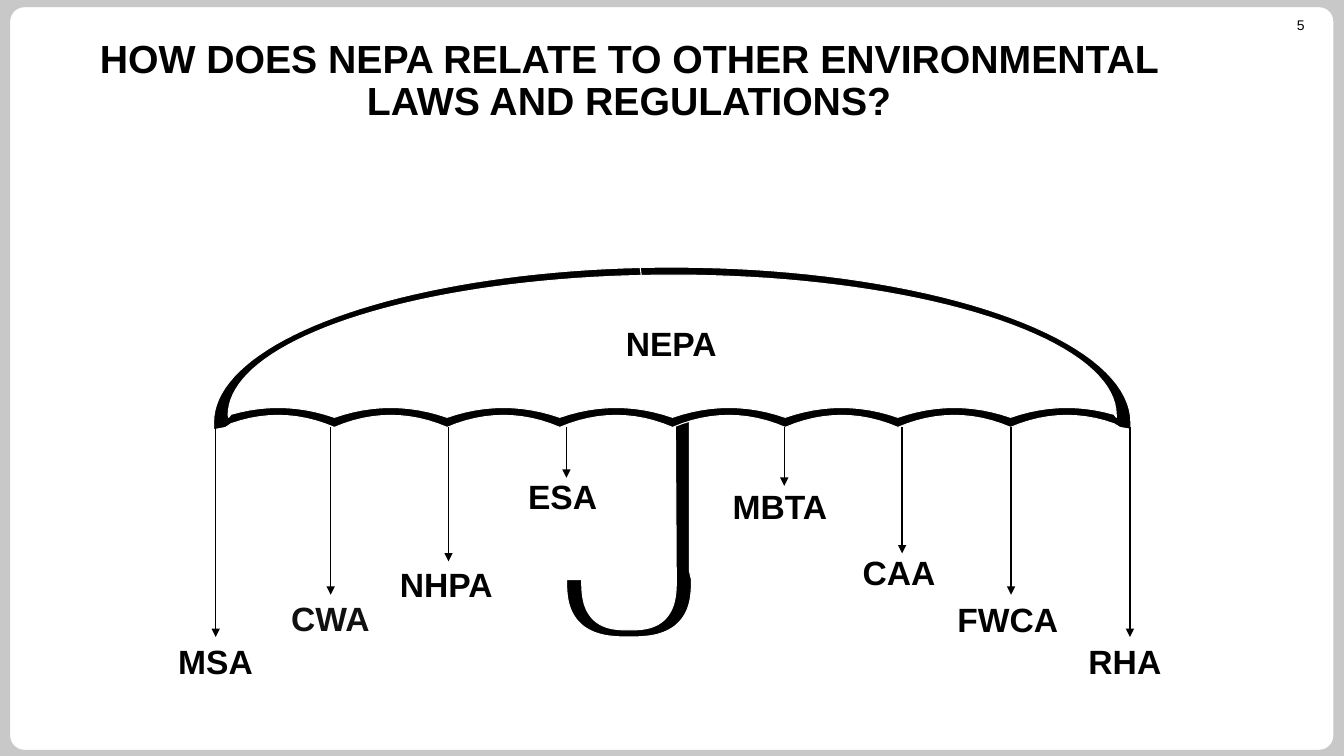
from math import copysign, cos, radians, sin

from lxml.etree import SubElement
from pptx import Presentation
from pptx.dml.color import RGBColor
from pptx.enum.shapes import MSO_CONNECTOR, MSO_SHAPE
from pptx.enum.text import MSO_ANCHOR, MSO_AUTO_SIZE, PP_ALIGN
from pptx.oxml.ns import qn
from pptx.util import Pt

SEAM = 94
CENTER = 480.2
FIRST_VALLEY, SCALLOP, SCALLOPS = 158.4, 80.5, 8
HEM = 305.3

LAWS = [
    ("MSA", 120.2, 454.3, 69.8, 154.1, 455),
    ("CWA", 200.9, 423.4, 70.6, 236.2, 424.8),
    ("NHPA", 278.6, 399.6, 82.8, 320.4, 401),
    ("ESA", 370.1, 336.2, 64.1, 404.6, 341.3),
    ("MBTA", 516.2, 343.4, 87.8, 560.2, 347),
    ("CAA", 609.1, 391, 70.6, 644.4, 395.3),
    ("FWCA", 676.8, 424.1, 90.7, 722.2, 424.8),
    ("RHA", 770.4, 454.3, 75.6, 807.1, 455),
]


def color(value):
    return RGBColor.from_string(value)


def format_text(frame, text, size=24, bold=True, ink="000000", align=PP_ALIGN.LEFT,
                spacing=1.0, font="Arial"):
    para = frame.paragraphs[0]
    para.alignment = align
    para.line_spacing = spacing
    para.space_before = Pt(0)
    span = para.add_run()
    span.text = text
    span.font.name = font
    span.font.size = Pt(size)
    span.font.bold = bold
    span.font.color.rgb = color(ink)


def arc(center, base, radius, height, start, end, power=2, steps=40):
    points = []
    for step in range(steps + 1):
        angle = radians(start + (end - start) * step / steps)
        across, up = (copysign(abs(part) ** (2 / power), part)
                      for part in (cos(angle), sin(angle)))
        points.append((center + radius * across, base - height * up))
    return points


def scallops(left, right, valley, rise, steps=12):
    points = []
    for step in range(SCALLOPS * steps + 1):
        x = FIRST_VALLEY + SCALLOP * step / steps
        part = step % steps / steps
        points.append((min(max(x, left), right), valley - rise * 4 * part * (1 - part)))
    return points


def canopy():
    outer = (CENTER, 301.7, 327.6, 110.9)
    inner = (CENTER, 296.6, 317.2, 100.1)
    return (arc(*inner, SEAM, 180) + scallops(163.4, 797.4, 298.1, 7)
            + arc(*inner, 0, SEAM) + arc(*outer, SEAM, 0) + [(807.8, 306.7)]
            + scallops(161.3, 800, HEM, 8.6)[::-1] + [(152.6, 307)]
            + arc(*outer, 180, SEAM))


def handle():
    hook_center, hook_base, roundness = 449.3, 414, 2.7
    return ([(482.4, 298.8)]
            + arc(hook_center, hook_base, 33.8, 36, 0, -180, roundness)
            + arc(hook_center, hook_base, 44.6, 41, -180, 0, roundness)
            + [(492.5, 408.2), (492.5, 298.8)])


class SlideBuilder:
    """Hold the deck style and draw each kind of element on the current page."""

    def __init__(self, deck, ink="000000", paper="FFFFFF", backdrop="C8C8C8"):
        self.ink, self.paper, self.backdrop = ink, paper, backdrop
        self.page = deck.slides.add_slide(deck.slide_layouts[5])
        fill = self.page.background.fill
        fill.solid()
        fill.fore_color.rgb = color(backdrop)

    def paint(self, shape, fill, line, width):
        shape.shadow.inherit = False
        shape.fill.solid()
        shape.fill.fore_color.rgb = color(fill)
        shape.line.color.rgb = color(line)
        shape.line.width = Pt(width)

    def card(self, left, top, width, height):
        shape = self.page.shapes.add_shape(
            MSO_SHAPE.ROUNDED_RECTANGLE, Pt(left), Pt(top), Pt(width), Pt(height))
        shape.adjustments[0] = 0.023
        self.paint(shape, self.paper, self.backdrop, 4.5)

    def title(self, text, left, top, width, height):
        box = self.page.shapes.title
        box.left, box.top, box.width, box.height = Pt(left), Pt(top), Pt(width), Pt(height)
        box.text_frame.word_wrap = True
        box.text_frame.auto_size = MSO_AUTO_SIZE.NONE
        box.text_frame.vertical_anchor = MSO_ANCHOR.MIDDLE
        format_text(box.text_frame, text, size=28, align=PP_ALIGN.CENTER, spacing=0.9)

    def label(self, text, left, top, width, height=36, margin=3.6, **style):
        box = self.page.shapes.add_textbox(Pt(left), Pt(top), Pt(width), Pt(height))
        frame = box.text_frame
        frame.word_wrap = True
        frame.margin_top = frame.margin_bottom = Pt(margin)
        format_text(frame, text, **style)

    def outline(self, points):
        corners = [(Pt(x), Pt(y)) for x, y in points]
        builder = self.page.shapes.build_freeform(*corners[0])
        builder.add_line_segments(corners[1:], close=True)
        self.paint(builder.convert_to_shape(), self.ink, self.paper, 0.75)

    def arrow(self, x, top, bottom):
        line = self.page.shapes.add_connector(
            MSO_CONNECTOR.STRAIGHT, Pt(x), Pt(top), Pt(x), Pt(bottom))
        line.line.color.rgb = color(self.ink)
        line.line.width = Pt(1)
        SubElement(line.line._get_or_add_ln(), qn("a:tailEnd"), type="triangle")
        SubElement(line._element.spPr, qn("a:effectLst"))


def main():
    deck = Presentation()
    deck.slide_width, deck.slide_height = Pt(960), Pt(540)
    builder = SlideBuilder(deck)
    builder.card(5, 2.9, 949.7, 535)
    builder.label("5", 878.4, 11.5, 60.5, 12.2, margin=0, size=10, bold=False,
                  align=PP_ALIGN.RIGHT)
    builder.title("HOW DOES NEPA RELATE TO OTHER ENVIRONMENTAL LAWS AND REGULATIONS?",
                  52.6, 28.4, 793.4, 59.8)
    builder.outline(handle())
    builder.outline(canopy())
    for law, left, top, width, x, tip in LAWS:
        builder.arrow(x, HEM, tip)
        builder.label(law, left, top, width, ink="101010" if law == "CWA" else "000000")
    builder.label("NEPA", 439.9, 226.8, 79.9)
    title = builder.page.shapes.title._element
    title.getparent().append(title)
    deck.save("out.pptx")


if __name__ == "__main__":
    main()
